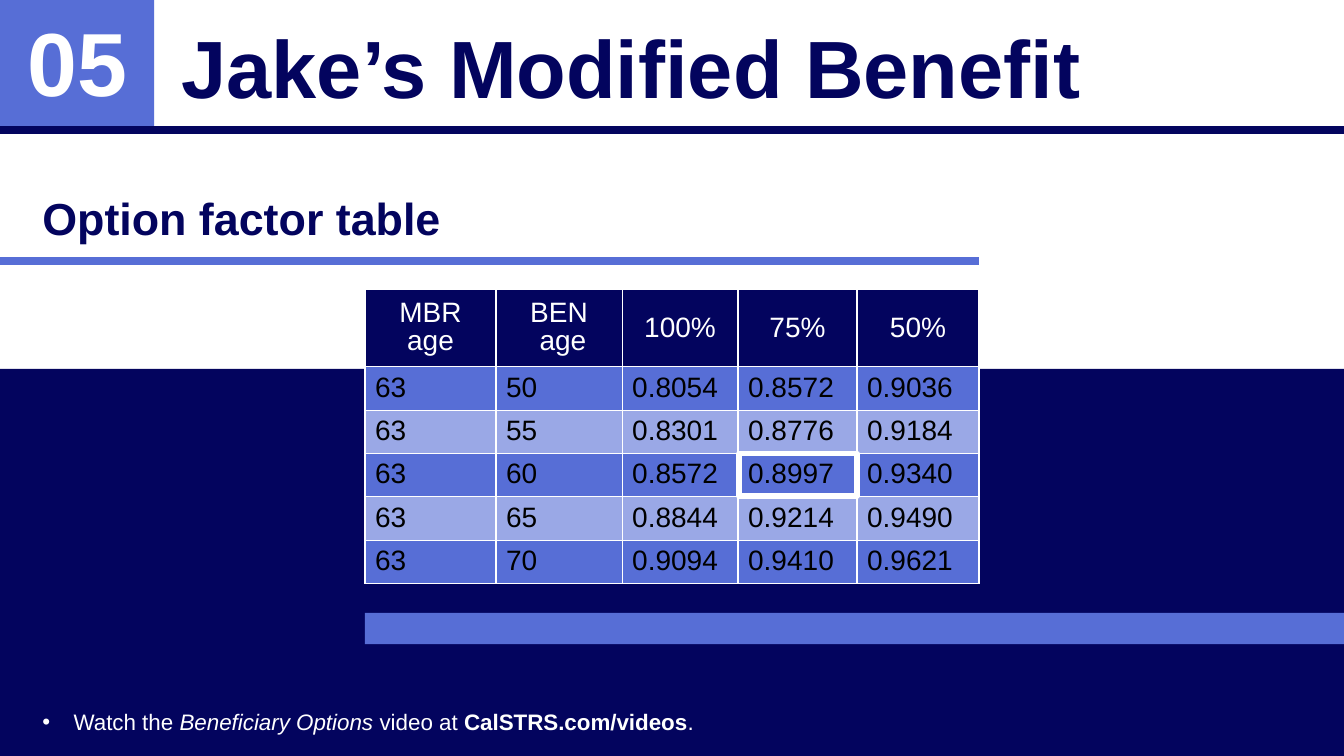
from dataclasses import dataclass

from lxml import etree
from pptx import Presentation
from pptx.dml.color import RGBColor
from pptx.enum.shapes import MSO_CONNECTOR, MSO_SHAPE
from pptx.enum.text import MSO_ANCHOR, MSO_AUTO_SIZE, PP_ALIGN
from pptx.oxml.ns import qn
from pptx.util import Inches, Pt


@dataclass(frozen=True)
class Theme:
    font: str = "Arial"
    navy: str = "03045E"
    blue: str = "576ED6"
    pale: str = "9AA8E6"
    white: str = "FFFFFF"
    black: str = "000000"
    number: int = 64
    title: int = 58
    subtitle: int = 32
    table: int = 20
    note: int = 16


def color(value):
    return RGBColor.from_string(value)


class SlideBuilder:
    def __init__(self, prs, theme):
        self.theme = theme
        self.s = prs.slides.add_slide(prs.slide_layouts[3])

    def rect(self, x, y, w, h, fill=None, line=None, width=0):
        sp = self.s.shapes.add_shape(
            MSO_SHAPE.RECTANGLE, Inches(x), Inches(y), Inches(w), Inches(h))
        sp.shadow.inherit = False
        if fill:
            sp.fill.solid()
            sp.fill.fore_color.rgb = color(fill)
        else:
            sp.fill.background()
        if line:
            sp.line.color.rgb = color(line)
            sp.line.width = Pt(width)
        else:
            sp.line.fill.background()

    def rule(self, y, x_end, line):
        cn = self.s.shapes.add_connector(
            MSO_CONNECTOR.STRAIGHT, Inches(0), Inches(y), Inches(x_end), Inches(y))
        cn.line.color.rgb = color(line)
        cn.line.width = Pt(6)
        etree.SubElement(cn.element.spPr, qn("a:effectLst"))

    def run(self, p, text, size, fill, bold=False, italic=False):
        r = p.add_run()
        r.text = text
        r.font.name = self.theme.font
        r.font.size = Pt(size)
        r.font.color.rgb = color(fill)
        r.font.bold = bold
        r.font.italic = italic

    def frame(self, sp, anchor, align, spacing):
        tf = sp.text_frame
        tf.word_wrap = True
        tf.auto_size = MSO_AUTO_SIZE.NONE
        tf.vertical_anchor = anchor
        p = tf.paragraphs[0]
        p.alignment = align
        p.line_spacing = spacing
        p.space_before = Pt(0)
        return p

    def text(self, x, y, w, h):
        sp = self.s.shapes.add_textbox(Inches(x), Inches(y), Inches(w), Inches(h))
        return self.frame(sp, MSO_ANCHOR.MIDDLE, PP_ALIGN.CENTER, 0.9)

    def placeholder(self, idx, x, y, w, h, anchor=MSO_ANCHOR.TOP, spacing=1.0, bullet=None):
        sp = self.s.placeholders[idx]
        self.s.shapes.element.append(sp.element)
        sp.left, sp.top, sp.width, sp.height = (Inches(v) for v in (x, y, w, h))
        p = self.frame(sp, anchor, PP_ALIGN.LEFT, spacing)
        pPr = p._p.get_or_add_pPr()
        indent = Inches(0.31) if bullet else 0
        pPr.set("marL", str(indent))
        pPr.set("indent", str(-indent))
        if bullet:
            etree.SubElement(pPr, qn("a:buFont"), typeface=self.theme.font)
            etree.SubElement(pPr, qn("a:buChar"), char=bullet)
        else:
            etree.SubElement(pPr, qn("a:buNone"))
        return p

    def cell(self, cell, lines, fill, text_color, align, anchor):
        for side in ("L", "R", "T", "B"):
            ln = etree.SubElement(
                cell._tc.get_or_add_tcPr(), qn(f"a:ln{side}"), w=str(Pt(1)))
            solid = etree.SubElement(ln, qn("a:solidFill"))
            etree.SubElement(solid, qn("a:srgbClr"), val=self.theme.white)
        cell.fill.solid()
        cell.fill.fore_color.rgb = color(fill)
        cell.vertical_anchor = anchor
        tf = cell.text_frame
        for i, line in enumerate(lines):
            p = tf.add_paragraph() if i else tf.paragraphs[0]
            p.alignment = align
            if "age" in lines[-1]:
                p.line_spacing = Pt(20)
            self.run(p, line, self.theme.table, text_color)

    def table(self, x, y, widths, heights, header, rows):
        t = self.theme
        tbl = self.s.shapes.add_table(
            len(heights), len(widths), Inches(x), Inches(y),
            Inches(sum(widths)), Inches(sum(heights))).table
        for col, width in zip(tbl.columns, widths):
            col.width = Inches(width)
        for row, height in zip(tbl.rows, heights):
            row.height = Inches(height)
        for c, lines in enumerate(header):
            self.cell(tbl.cell(0, c), lines, t.navy, t.white,
                      PP_ALIGN.CENTER, MSO_ANCHOR.MIDDLE)
        for r, values in enumerate(rows, 1):
            for c, value in enumerate(values):
                self.cell(tbl.cell(r, c), [value], t.blue if r % 2 else t.pale,
                          t.black, PP_ALIGN.LEFT, MSO_ANCHOR.TOP)


def main():
    prs = Presentation()
    prs.slide_width, prs.slide_height = Inches(13.33), Inches(7.5)
    t = Theme()
    b = SlideBuilder(prs, t)

    b.rect(0, 3.66, 13.33, 3.84, t.navy)
    b.rect(0, 0, 1.53, 1.29, t.blue)
    b.run(b.text(0.17, 0.19, 1.2, 0.96), "05", t.number, t.white, bold=True)
    b.rule(1.29, 13.33, t.navy)

    title = b.placeholder(0, 1.7, 0.01, 11.46, 1.29, MSO_ANCHOR.MIDDLE)
    b.run(title, "Jake’s Modified Benefit", t.title, t.navy, bold=True)

    note = b.placeholder(2, 0.32, 6.98, 9.59, 0.37, bullet="•")
    b.run(note, "Watch the ", t.note, t.white)
    b.run(note, "Beneficiary Options ", t.note, t.white, italic=True)
    b.run(note, "video at ", t.note, t.white)
    b.run(note, "CalSTRS.com/videos", t.note, t.white, bold=True)
    b.run(note, ".", t.note, t.white)

    subtitle = b.placeholder(1, 0.32, 1.9, 6.5, 0.65, spacing=0.9)
    b.run(subtitle, "Option factor table", t.subtitle, t.navy, bold=True)

    header = [["MBR age"], ["BEN", " age"], ["100%"], ["75%"], ["50%"]]
    rows = [
        ("63", "50", "0.8054", "0.8572", "0.9036"),
        ("63", "55", "0.8301", "0.8776", "0.9184"),
        ("63", "60", "0.8572", "0.8997", "0.9340"),
        ("63", "65", "0.8844", "0.9214", "0.9490"),
        ("63", "70", "0.9094", "0.9410", "0.9621"),
    ]
    b.table(3.62, 2.87, [1.3, 1.25, 1.15, 1.18, 1.21],
            [0.77] + [0.43] * len(rows), header, rows)

    b.rule(2.59, 9.71, t.blue)
    b.rect(3.62, 6.08, 9.71, 0.31, t.blue)
    b.rect(7.33, 4.5, 1.17, 0.42, line=t.white, width=4)

    prs.save("out.pptx")


if __name__ == "__main__":
    main()
